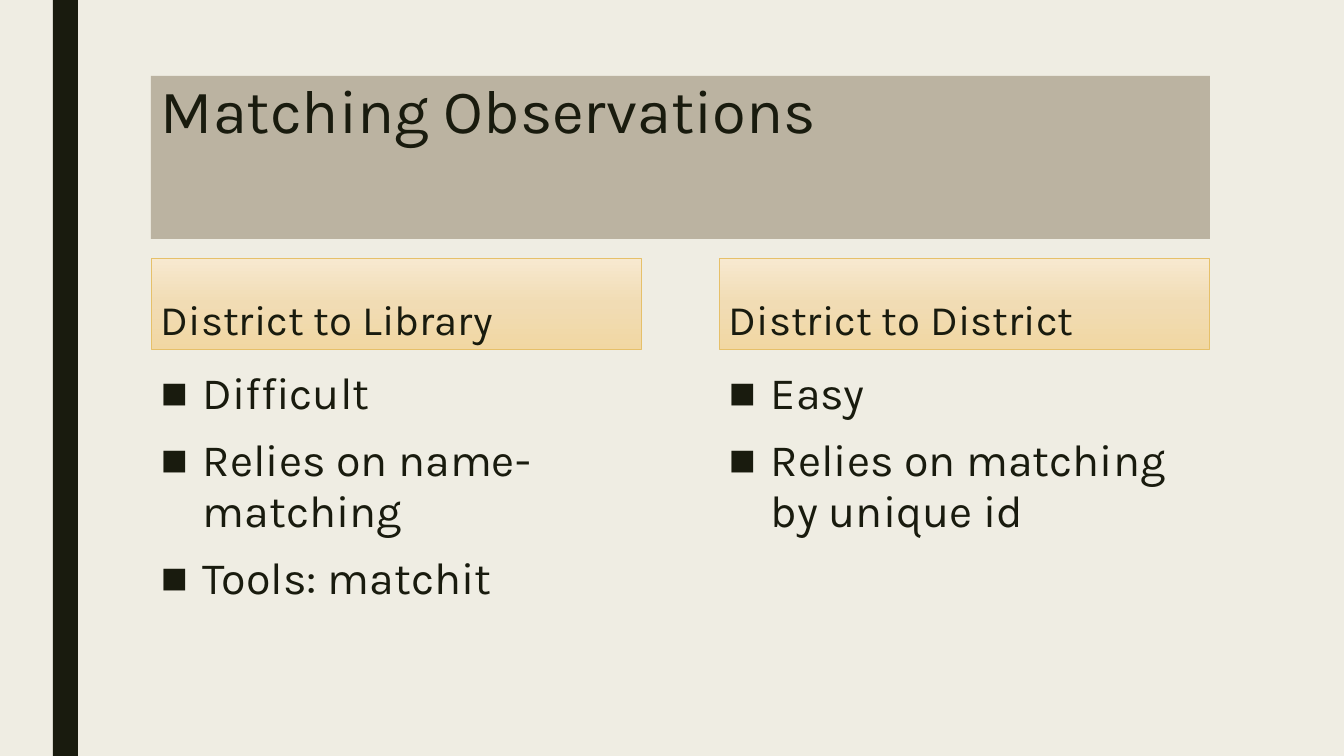
from copy import deepcopy

from lxml.etree import SubElement as Sub
from pptx import Presentation
from pptx.dml.color import RGBColor
from pptx.enum.shapes import MSO_SHAPE as Shape
from pptx.enum.text import MSO_ANCHOR as Anchor, PP_ALIGN as Align
from pptx.oxml.ns import qn
from pptx.util import Emu, Pt

INK = "191B0E"
PAPER = "EFEDE3"
STONE = "897B61"
GOLD = "E6C069"
FADE = [(0, "F7E9D0"), (0.5, "F1DCB4"), (1, "F1D7A3")]
INDENT = 42
COLS = [
    ("District to Library",
     ["Difficult", "Relies on name-matching", "Tools: matchit"]),
    ("District to District",
     ["Easy", "Relies on matching by unique id"]),
]


def px(n):
    return Emu(round(n * 914400 / 100.8))


def tint(text):
    return RGBColor.from_string(text)


def rect(slide, box, color=None):
    shape = slide.shapes.add_shape(Shape.RECTANGLE, *map(px, box))
    shape.shadow.inherit = False
    shape.line.fill.background()
    if color:
        shape.fill.solid()
        shape.fill.fore_color.rgb = tint(color)
    return shape


def write(shape, lines, size, anchor=Anchor.TOP, **form):
    """Fill a shape with one paragraph per line, each with the same format."""
    frame = shape.text_frame
    frame.word_wrap = True
    frame.vertical_anchor = anchor
    for i, line in enumerate(lines):
        para = frame.paragraphs[0] if i == 0 else frame.add_paragraph()
        for name, value in {"alignment": Align.LEFT, **form}.items():
            setattr(para, name, value)
        run = para.add_run()
        run.text = line
        for name, value in {"name": "Karla", "size": Pt(size)}.items():
            setattr(run.font, name, value)
        run.font.color.rgb = tint(INK)
    return frame.paragraphs


def blend(shape):
    """Give a shape the vertical three-stop gold gradient."""
    fill = shape.fill
    fill.gradient()
    fill.gradient_angle = 270
    stops = shape.element.spPr.find(".//" + qn("a:gsLst"))
    stops.append(deepcopy(stops[0]))
    for stop, (place, color) in zip(fill.gradient_stops, FADE):
        stop.position = place
        stop.color.rgb = tint(color)


def bullet(para):
    props = para._p.get_or_add_pPr()
    props.set("marL", str(px(INDENT)))
    props.set("indent", str(-px(INDENT)))
    Sub(props, qn("a:buFont"), typeface="Arial")
    Sub(props, qn("a:buChar"), char="■")


def title(slide, box):
    band = rect(slide, box, STONE)
    color = band.element.spPr.find(".//" + qn("a:srgbClr"))
    Sub(color, qn("a:alpha"), val="50000")
    write(band, ["Matching Observations"], 44, line_spacing=0.89)


def column(slide, box, label, points):
    left, top, width, height = box
    head = rect(slide, (left, top, width, 91))
    blend(head)
    head.line.color.rgb = tint(GOLD)
    head.line.width = Pt(0.5)
    write(head, [label], 30, Anchor.BOTTOM, line_spacing=0.84)

    drop = 106
    body = slide.shapes.add_textbox(
        *map(px, (left, top + drop, width, height - drop)))
    for para in write(body, points, 32, line_spacing=0.94,
                      space_before=Pt(10), space_after=Pt(2)):
        bullet(para)


def main():
    deck = Presentation()
    deck.slide_width, deck.slide_height = px(1344), px(756)
    slide = deck.slides.add_slide(deck.slide_layouts[6])
    back = slide.background.fill
    back.solid()
    back.fore_color.rgb = tint(PAPER)

    rect(slide, (53, 0, 25, 756), INK)
    title(slide, (151, 76, 1059, 163))
    for i, (label, points) in enumerate(COLS):
        column(slide, (151 + 568 * i, 258, 490, 388), label, points)
    deck.save("out.pptx")


if __name__ == "__main__":
    main()
